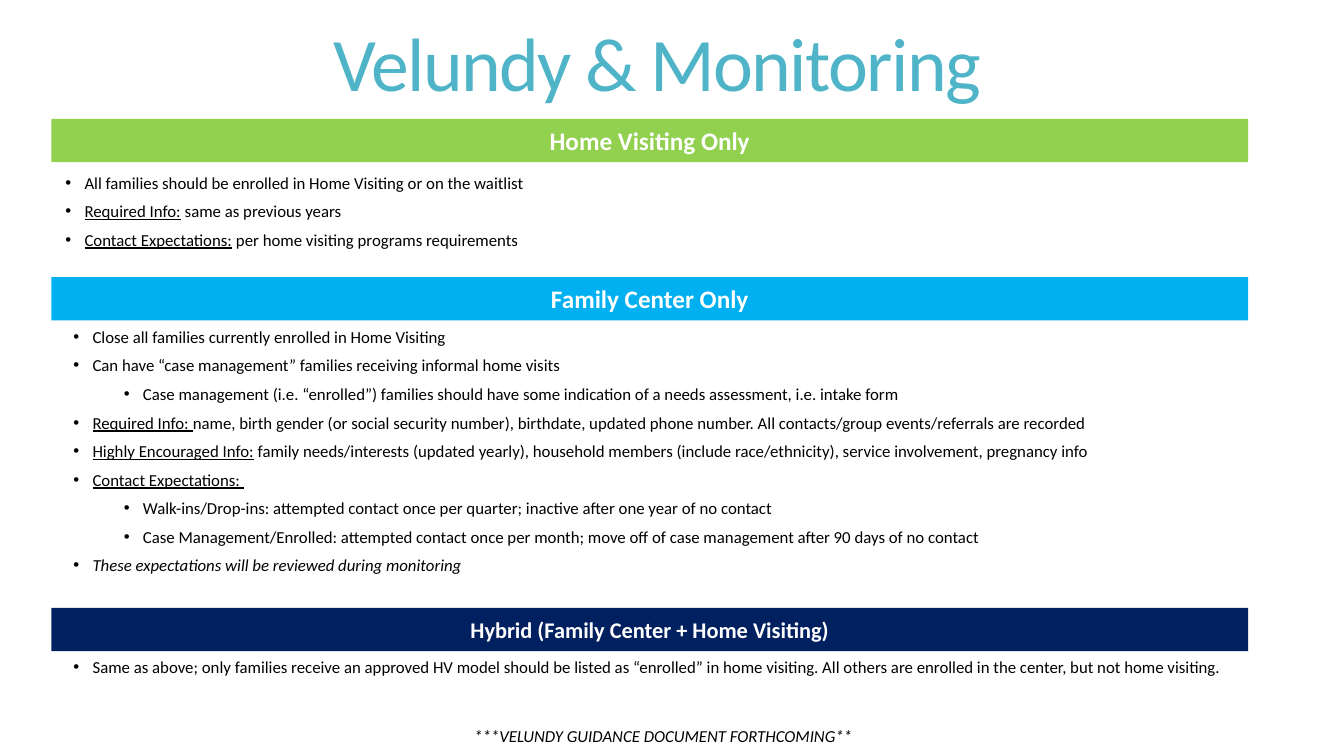
from lxml import etree
from pptx import Presentation
from pptx.dml.color import RGBColor
from pptx.enum.shapes import MSO_SHAPE
from pptx.enum.text import MSO_ANCHOR, PP_ALIGN
from pptx.oxml.ns import qn
from pptx.util import Inches, Pt

RECTANGLE = MSO_SHAPE.RECTANGLE
MIDDLE = MSO_ANCHOR.MIDDLE
CENTER = PP_ALIGN.CENTER

TITLE = "Velundy & Monitoring"
FOOTNOTE = "***VELUNDY GUIDANCE DOCUMENT FORTHCOMING**"
PLAIN, UNDERLINE, ITALIC = "plain", "underline", "italic"

SECTIONS = [
    {
        "heading": "Home Visiting Only", "color": "green", "size": "heading",
        "top": 1.18, "body": (0.43, 1.66, 12.02, 1.73),
        "bullets": [
            (1, [("All families should be enrolled in Home Visiting or on the waitlist", PLAIN)]),
            (1, [("Required Info:", UNDERLINE), (" same as previous years", PLAIN)]),
            (1, [("Contact Expectations:", UNDERLINE),
                 (" per home visiting programs requirements", PLAIN)]),
        ],
    },
    {
        "heading": "Family Center Only", "color": "blue", "size": "heading",
        "top": 2.75, "body": (0.51, 3.19, 11.87, 2.88),
        "bullets": [
            (1, [("Close all families currently enrolled in Home Visiting", PLAIN)]),
            (1, [("Can have “case management” families receiving informal home visits", PLAIN)]),
            (2, [("Case management (i.e. “enrolled”) families should have some indication "
                  "of a needs assessment, i.e. intake form", PLAIN)]),
            (1, [("Required Info: ", UNDERLINE),
                 ("name, birth gender (or social security number), birthdate, updated phone number. "
                  "All contacts/group events/referrals are recorded", PLAIN)]),
            (1, [("Highly Encouraged Info:", UNDERLINE),
                 (" family needs/interests (updated yearly), household members "
                  "(include race/ethnicity), service involvement, pregnancy info", PLAIN)]),
            (1, [("Contact Expectations: ", UNDERLINE)]),
            (2, [("Walk-ins/Drop-ins: attempted contact once per quarter; "
                  "inactive after one year of no contact", PLAIN)]),
            (2, [("Case Management/Enrolled: attempted contact once per month; "
                  "move off of case management after 90 days of no contact", PLAIN)]),
            (1, [("These expectations will be reviewed during monitoring", ITALIC)]),
        ],
    },
    {
        "heading": "Hybrid (Family Center + Home Visiting)", "color": "navy", "size": "small_heading",
        "top": 6.03, "body": (0.51, 6.47, 12.02, 0.3),
        "bullets": [
            (1, [("Same as above; only families receive an approved HV model should be listed as "
                  "“enrolled” in home visiting. All others are enrolled in the center, "
                  "but not home visiting.", PLAIN)]),
        ],
    },
]

THEME = {
    "font": "Calibri",
    "colors": {"title": "50B4C8", "green": "92D050", "blue": "00B0F0", "navy": "002060",
               "text": "000000", "heading": "FFFFFF"},
    "sizes": {"title": 54, "heading": 18, "small_heading": 16, "body": 12},
}
BANNER_LEFT, BANNER_WIDTH, BANNER_HEIGHT = 0.51, 11.87, 0.43
TITLE_BOX = (0.77, 0.09, 11.5, 1.17)
FOOTNOTE_BOX = (0.51, 7.15, 12.02, 0.3)
FIRST_INDENT, LEVEL_STEP, BULLET_HANG = 0.31, 0.5, 0.19
FOOTNOTE_INDENT = 0.12
PARAGRAPH_GAP = 6


def color_of(name):
    return RGBColor.from_string(THEME["colors"][name])


def style_span(span, size, color):
    span.font.name = THEME["font"]
    span.font.size = Pt(THEME["sizes"][size])
    span.font.color.rgb = color_of(color)


def add_box(page, place):
    box = page.shapes.add_textbox(*map(Inches, place))
    box.text_frame.word_wrap = True
    return box


def set_centered(frame, text, size, color):
    frame.text = text
    para = frame.paragraphs[0]
    para.alignment = CENTER
    span = para.runs[0]
    style_span(span, size, color)
    return para, span


def set_indent(para, left, hang):
    properties = para._p.get_or_add_pPr()
    properties.set("marL", str(Inches(left)))
    properties.set("indent", str(-Inches(hang)))
    return properties


def add_title(page):
    frame = add_box(page, TITLE_BOX).text_frame
    frame.vertical_anchor = MIDDLE
    para, span = set_centered(frame, TITLE, "title", "title")
    para.line_spacing = 0.85
    span._r.get_or_add_rPr().set("spc", "-120")


def add_banner(page, section):
    banner = page.shapes.add_shape(RECTANGLE, Inches(BANNER_LEFT), Inches(section["top"]),
                                   Inches(BANNER_WIDTH), Inches(BANNER_HEIGHT))
    banner.shadow.inherit = False
    banner.fill.solid()
    banner.fill.fore_color.rgb = color_of(section["color"])
    banner.line.fill.background()
    banner.text_frame.vertical_anchor = MIDDLE
    span = set_centered(banner.text_frame, section["heading"], section["size"], "heading")[1]
    span.font.bold = True


def add_bullets(page, section):
    frame = add_box(page, section["body"]).text_frame
    for index, (level, spans) in enumerate(section["bullets"]):
        para = frame.add_paragraph() if index else frame.paragraphs[0]
        para.level = level
        para.space_before = Pt(PARAGRAPH_GAP)
        left = FIRST_INDENT + (level - 1) * LEVEL_STEP
        properties = set_indent(para, left, BULLET_HANG)
        etree.SubElement(properties, qn("a:buFont")).set("typeface", "Arial")
        etree.SubElement(properties, qn("a:buChar")).set("char", "•")
        for text, emphasis in spans:
            span = para.add_run()
            span.text = text
            style_span(span, "body", "text")
            span.font.underline = emphasis == UNDERLINE
            span.font.italic = emphasis == ITALIC


def add_footnote(page):
    frame = add_box(page, FOOTNOTE_BOX).text_frame
    para, span = set_centered(frame, FOOTNOTE, "body", "text")
    para.space_before = Pt(PARAGRAPH_GAP)
    set_indent(para, FOOTNOTE_INDENT, 0)
    span.font.italic = True


def main():
    deck = Presentation()
    deck.slide_width, deck.slide_height = Inches(13.33), Inches(7.5)
    page = deck.slides.add_slide(deck.slide_layouts[6])
    add_title(page)
    for section in SECTIONS:
        add_banner(page, section)
        add_bullets(page, section)
    add_footnote(page)
    deck.save("out.pptx")


if __name__ == "__main__":
    main()
